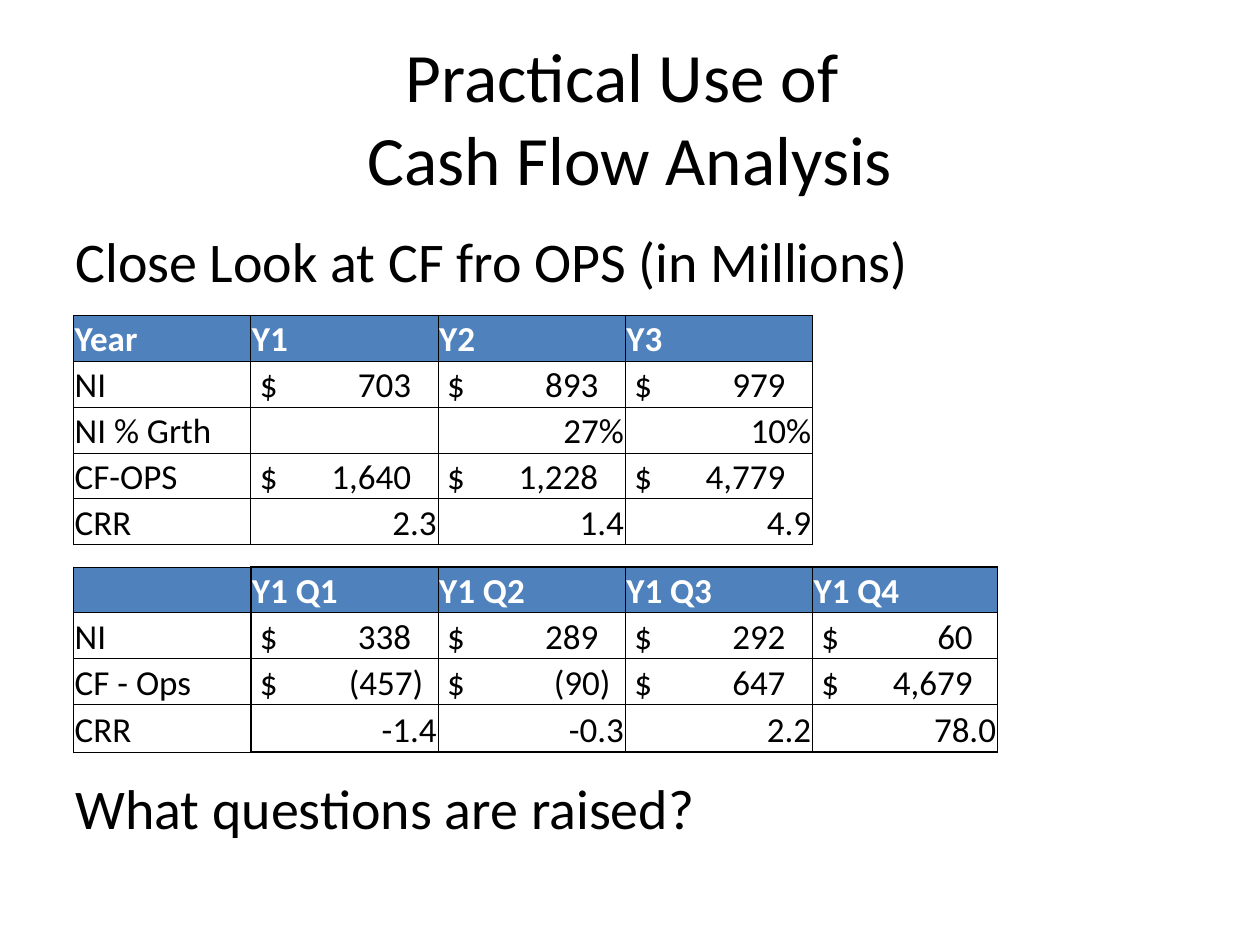
from lxml import etree
from pptx import Presentation
from pptx.dml.color import RGBColor
from pptx.enum import text
from pptx.oxml import ns
from pptx.util import Pt

HUES = {"ink": "000000", "head": "4F81BD", "pale": "FFFFFF"}
FONT = "Calibri"
YEARS = [
    ["Year", "Y1", "Y2", "Y3"],
    ["NI", "$703", "$893", "$979"],
    ["NI % Grth", "", "27%", "10%"],
    ["CF-OPS", "$1,640", "$1,228", "$4,779"],
    ["CRR", "2.3", "1.4", "4.9"],
]
TERMS = [
    ["", "Y1 Q1", "Y1 Q2", "Y1 Q3", "Y1 Q4"],
    ["NI", "$338", "$289", "$292", "$60"],
    ["CF - Ops", "$(457)", "$(90)", "$647", "$4,679"],
    ["CRR", "-1.4", "-0.3", "2.2", "78.0"],
]


def add_run(para, words, size, hue="ink", bold=False):
    run = para.add_run()
    run.text = words
    font = run.font
    font.name, font.size, font.bold = FONT, Pt(size), bold
    font.color.rgb = RGBColor.from_string(HUES[hue])


def add_frame(slide, box, anchor):
    frame = slide.shapes.add_textbox(*map(Pt, box)).text_frame
    frame.word_wrap = True
    frame.vertical_anchor = anchor
    return frame


def add_title(slide, box):
    para = add_frame(slide, box, text.MSO_ANCHOR.MIDDLE).paragraphs[0]
    para.alignment = text.PP_ALIGN.CENTER
    add_run(para, "Practical Use of ", 39.6)
    para.add_line_break()
    add_run(para, "Cash Flow Analysis", 39.6)


def add_body(slide, box):
    frame = add_frame(slide, box, text.MSO_ANCHOR.TOP)
    add_run(frame.paragraphs[0], "Close Look at CF fro OPS (in Millions)", 32)
    para = frame.add_paragraph()
    para.space_before = Pt(274)
    add_run(para, "What questions are raised?", 32)


def add_edges(cell, sides):
    props = cell._tc.get_or_add_tcPr()
    for side, width in sides.items():
        line = etree.SubElement(props, ns.qn(f"a:ln{side}"), w=str(Pt(width)))
        fill = etree.SubElement(line, ns.qn("a:solidFill"))
        etree.SubElement(fill, ns.qn("a:srgbClr"), val=HUES["ink"])


def add_tab(para, place):
    props = para._p.get_or_add_pPr()
    tabs = etree.SubElement(props, ns.qn("a:tabLst"))
    etree.SubElement(tabs, ns.qn("a:tab"), pos=str(Pt(place)), algn="r")


def fill_cell(cell, words, head, label):
    cell.margin_left = cell.margin_right = cell.margin_top = Pt(0.7)
    cell.margin_bottom = 0
    cell.vertical_anchor = text.MSO_ANCHOR.BOTTOM
    if head:
        cell.fill.solid()
        cell.fill.fore_color.rgb = RGBColor.from_string(HUES["head"])
    else:
        cell.fill.background()
    if not words:
        return
    para = cell.text_frame.paragraphs[0]
    if words.startswith("$"):
        add_tab(para, 98 if words.endswith(")") else 91)
        words = " $\t" + words[1:]
    elif not head and not label:
        para.alignment = text.PP_ALIGN.RIGHT
    add_run(para, words, 20, "pale" if head else "ink", head)


def add_grid(slide, box, data, cols, rows, frame=False):
    grid = slide.shapes.add_table(len(data), len(cols), *map(Pt, box)).table
    grid.first_row = grid.horz_banding = False
    for col, width in zip(grid.columns, cols):
        col.width = Pt(width)
    for row, height in zip(grid.rows, rows):
        row.height = Pt(height)
    for r, line in enumerate(data):
        for c, words in enumerate(line):
            cell = grid.cell(r, c)
            heavy = {
                "L": c == 1,
                "R": c in (0, len(cols) - 1),
                "T": r == 0 and c > 0,
                "B": r == len(data) - 1 and c > 0,
            }
            add_edges(cell, {s: 1 if frame and h else 0.5 for s, h in heavy.items()})
            fill_cell(cell, words, r == 0, c == 0)


def main():
    deck = Presentation()
    deck.slide_width, deck.slide_height = Pt(720), Pt(540)
    slide = deck.slides.add_slide(deck.slide_layouts[6])
    add_title(slide, (36, 21.6, 648, 90))
    add_body(slide, (36, 126, 648, 384))
    cols = [101.3] + [107] * 3
    add_grid(slide, (42, 180.3, 422.3, 131), YEARS, cols, [26.2] * 5)
    add_grid(slide, (42, 324, 528, 105.8), TERMS, cols + [105.7],
             [26.2] * 3 + [27.2], frame=True)
    deck.save("out.pptx")


if __name__ == "__main__":
    main()
